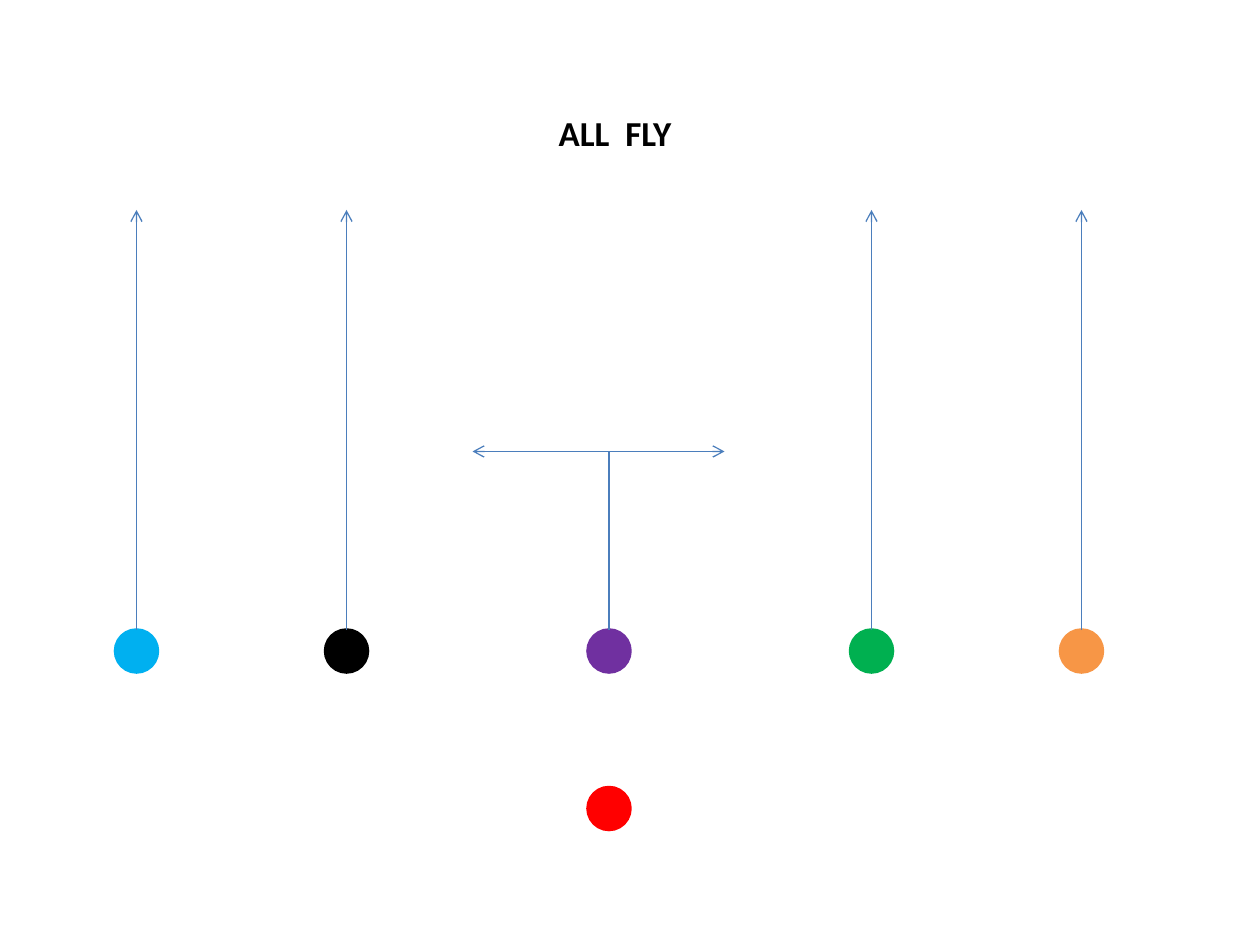
from lxml import etree
from pptx import Presentation
from pptx.dml.color import RGBColor
from pptx.enum.shapes import MSO_CONNECTOR, MSO_SHAPE
from pptx.enum.text import MSO_ANCHOR, MSO_AUTO_SIZE, PP_ALIGN
from pptx.oxml.ns import qn
from pptx.util import Inches, Pt

OVAL = MSO_SHAPE.OVAL
LINE = MSO_CONNECTOR.STRAIGHT
LEFT = PP_ALIGN.LEFT
TOP = MSO_ANCHOR.TOP
GROW = MSO_AUTO_SIZE.SHAPE_TO_FIT_TEXT

COLORS = {
    "blue": "00B0F0", "black": "000000", "purple": "7030A0",
    "green": "00B050", "orange": "F79646", "red": "FF0000",
    "route": "4B7EBC",
}
WIDTH, HEIGHT = Inches(10), Inches(7.5)
CELL = WIDTH / 120  # the field is a grid of 120 columns by 90 rows
DOT = 4
FLY = {"blue": 11, "black": 31, "green": 81, "orange": 101}
MID = 56
FRONT, BACK = 60, 75
DEEP, SHORT = 20, 43


def grid(*cells):
    return [round(cell * CELL) for cell in cells]


def color(name):
    return RGBColor.from_string(COLORS[name])


def add_title(slide, text, box, size=20, bold=True, font="Calibri", tint="black"):
    title = slide.shapes.title
    title.left, title.top, title.width, title.height = grid(*box)
    frame = title.text_frame
    frame.text = text
    frame.word_wrap = False
    frame.auto_size = GROW
    frame.vertical_anchor = TOP
    para = frame.paragraphs[0]
    para.alignment = LEFT
    style = para.runs[0].font
    style.name, style.size, style.bold = font, Pt(size), bold
    style.color.rgb = color(tint)


def add_dot(slide, name, col, row):
    dot = slide.shapes.add_shape(OVAL, *grid(col, row, DOT, DOT))
    dot.shadow.inherit = False
    dot.fill.solid()
    dot.fill.fore_color.rgb = color(name)
    dot.line.color.rgb = color(name)
    dot.line.width = Pt(2)
    return dot


def add_route(slide, start, end, dot=None, arrow=True):
    """Draw a route, joined to the top of its player's dot if one is given."""
    route = slide.shapes.add_connector(LINE, *grid(*start, *end))
    if dot is not None:
        route.begin_connect(dot, 0)
    route.line.color.rgb = color("route")
    route.line.width = Pt(0.75)
    if arrow:
        ln = route.line._get_or_add_ln()
        etree.SubElement(ln, qn("a:tailEnd"), type="arrow")
    etree.SubElement(route._element.spPr, qn("a:effectLst"))


def add_runner(slide, name, col, row, end, arrow=True):
    dot = add_dot(slide, name, col, row)
    mid = col + DOT / 2
    add_route(slide, (mid, row), (mid, end), dot, arrow)


def add_play(slide):
    for name, col in FLY.items():
        add_runner(slide, name, col, FRONT, DEEP)
    add_runner(slide, "purple", MID, FRONT, SHORT, arrow=False)
    for side in (-12, 12):
        add_route(slide, (MID + 1, SHORT), (MID + 1 + side, SHORT))
    add_dot(slide, "red", MID, BACK)


def main():
    deck = Presentation()
    deck.slide_width, deck.slide_height = WIDTH, HEIGHT
    slide = deck.slides.add_slide(deck.slide_layouts[5])
    add_title(slide, "ALL  FLY", (52, 10, 13.2, 5.25))
    add_play(slide)
    deck.save("out.pptx")


if __name__ == "__main__":
    main()
